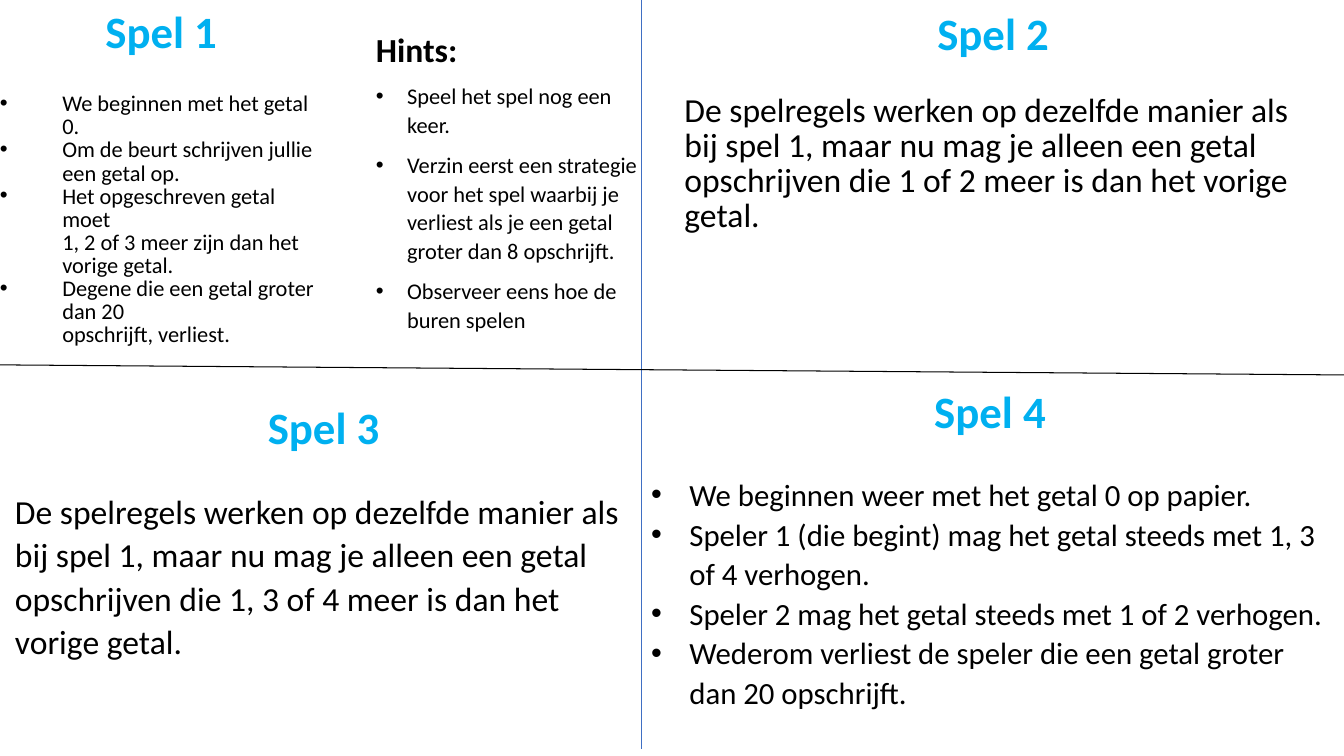
import copy
from dataclasses import dataclass

import pptx
import pptx.dml.color
import pptx.enum.shapes
import pptx.enum.text
import pptx.oxml
import pptx.oxml.ns
import pptx.shapes.autoshape
import pptx.slide
import pptx.text.text
import pptx.util
from pptx.util import Inches

TITLE_BLUE = pptx.dml.color.RGBColor(0x00, 0xB0, 0xF0)
DIVIDER_BLUE = pptx.dml.color.RGBColor(0x3F, 0x6F, 0xC3)
BLACK = pptx.dml.color.RGBColor(0x00, 0x00, 0x00)
FONT = "Calibri"
TIGHT = 0.86
LOOSE = 1.07
TITLE_GAP = 25


@dataclass
class Game:
    title: str
    rules: list[str]
    box: tuple[float, float, float, float]
    size: int
    spacing: float
    indent: float = 0
    last_gap: int = 0


@dataclass
class Divider:
    start: tuple[float, float]
    end: tuple[float, float]
    color: pptx.dml.color.RGBColor


GAMES = [
    Game("Spel 4", [
        "We beginnen weer met het getal 0 op papier.",
        "Speler 1 (die begint) mag het getal steeds met 1, 3 of 4 verhogen.",
        "Speler 2 mag het getal steeds met 1 of 2 verhogen.",
        "Wederom verliest de speler die een getal groter dan 20 opschrijft.",
    ], (6.36, 3.84, 6.92, 3.44), 22, LOOSE, 0.38, 8),
    Game("Spel 1", [
        "We beginnen met het getal 0.",
        "Om de beurt schrijven jullie \neen getal op.",
        "Het opgeschreven getal moet \n1, 2 of 3 meer zijn dan het vorige getal.",
        "Degene die een getal groter dan 20 \nopschrijft, verliest.",
    ], (-0.1, 0.07, 3.4, 3.44), 16, TIGHT, 0.62),
    Game("Spel 2", [
        "De spelregels werken op dezelfde manier als bij spel 1, maar nu mag je "
        "alleen een getal opschrijven die 1 of 2 meer is dan het vorige getal.",
    ], (6.69, 0.09, 6.32, 3.44), 24, TIGHT),
    Game("Spel 3", [
        "De spelregels werken op dezelfde manier als bij spel 1, maar nu mag je "
        "alleen een getal opschrijven die 1, 3 of 4 meer is dan het vorige getal.",
    ], (0.05, 3.99, 6.32, 3.44), 24, LOOSE, last_gap=8),
]

HINTS_BOX = (3.63, 0.21, 2.79, 3.45)
HINTS = [
    "Speel het spel nog een keer.",
    "Verzin eerst een strategie voor het spel waarbij je verliest als je een "
    "getal groter dan 8 opschrijft.",
    "Observeer eens hoe de buren spelen",
]

DIVIDERS = [
    Divider((6.36, 0), (6.36, 7.43), DIVIDER_BLUE),
    Divider((0, 3.62), (13.33, 3.72), BLACK),
]


def add_bullet(paragraph: pptx.text.text._Paragraph, indent: float) -> None:
    properties = paragraph._p.get_or_add_pPr()
    properties.set("marL", str(Inches(indent)))
    properties.set("indent", str(-Inches(indent)))
    namespace = pptx.oxml.ns.nsdecls("a")
    for markup in (
        f'<a:buClr {namespace}><a:srgbClr val="{BLACK}"/></a:buClr>',
        f'<a:buFont {namespace} typeface="Arial"/>',
        f'<a:buChar {namespace} char="•"/>',
    ):
        properties.append(pptx.oxml.parse_xml(markup))


def write_paragraph(
    paragraph: pptx.text.text._Paragraph,
    text: str,
    *,
    size: int,
    color: pptx.dml.color.RGBColor = BLACK,
    bold: bool = False,
    centered: bool = False,
    spacing: float = LOOSE,
    before: int = 0,
    after: int = 0,
    indent: float = 0,
) -> None:
    if indent:
        add_bullet(paragraph, indent)
    align = pptx.enum.text.PP_ALIGN
    paragraph.alignment = align.CENTER if centered else align.LEFT
    paragraph.line_spacing = spacing
    paragraph.space_before = pptx.util.Pt(before)
    paragraph.space_after = pptx.util.Pt(after)
    for number, line in enumerate(text.split("\n")):
        if number:
            paragraph.add_line_break()
        run = paragraph.add_run()
        run.text = line
        run.font.name = FONT
        run.font.size = pptx.util.Pt(size)
        run.font.bold = bold
        run.font.color.rgb = color
    for line_break in paragraph._p.findall(pptx.oxml.ns.qn("a:br")):
        line_break.append(copy.deepcopy(run._r.rPr))


def add_text_frame(
    slide: pptx.slide.Slide, box: tuple[float, float, float, float]
) -> pptx.text.text.TextFrame:
    frame = slide.shapes.add_textbox(*map(Inches, box)).text_frame
    frame.word_wrap = True
    return frame


def add_game(slide: pptx.slide.Slide, game: Game) -> None:
    frame = add_text_frame(slide, game.box)
    write_paragraph(frame.paragraphs[0], game.title, size=32, color=TITLE_BLUE,
                    bold=True, centered=True, spacing=TIGHT)
    last = len(game.rules) - 1
    for number, rule in enumerate(game.rules):
        write_paragraph(frame.add_paragraph(), rule, size=game.size,
                        spacing=game.spacing, indent=game.indent,
                        before=0 if number else TITLE_GAP,
                        after=game.last_gap if number == last else 0)


def add_hints(slide: pptx.slide.Slide) -> None:
    frame = add_text_frame(slide, HINTS_BOX)
    frame.auto_size = pptx.enum.text.MSO_AUTO_SIZE.SHAPE_TO_FIT_TEXT
    write_paragraph(frame.paragraphs[0], "Hints:", size=24, bold=True, after=8)
    for hint in HINTS:
        write_paragraph(frame.add_paragraph(), hint, size=16, after=8, indent=0.31)


def add_divider(slide: pptx.slide.Slide, divider: Divider) -> None:
    line = slide.shapes.add_connector(
        pptx.enum.shapes.MSO_CONNECTOR.STRAIGHT,
        *map(Inches, divider.start + divider.end),
    )
    line.line.color.rgb = divider.color
    line.line.width = pptx.util.Pt(0.75)
    line._element.spPr.append(
        pptx.oxml.parse_xml(f'<a:effectLst {pptx.oxml.ns.nsdecls("a")}/>')
    )


def main() -> None:
    presentation = pptx.Presentation()
    presentation.slide_width = Inches(13.33)
    presentation.slide_height = Inches(7.5)
    slide = presentation.slides.add_slide(presentation.slide_layouts[6])
    for game in GAMES:
        add_game(slide, game)
    add_hints(slide)
    for divider in DIVIDERS:
        add_divider(slide, divider)
    presentation.save("out.pptx")


if __name__ == "__main__":
    main()
